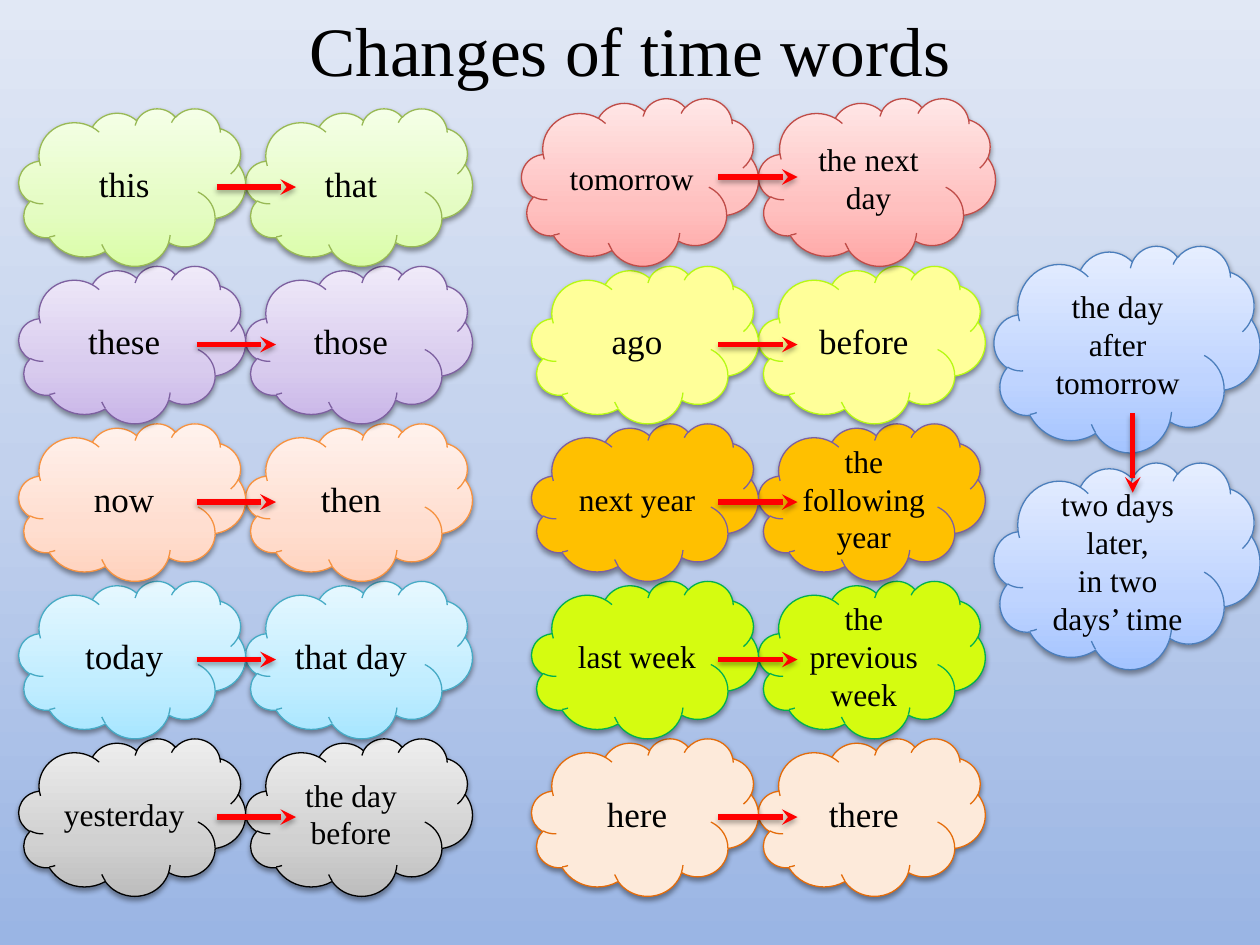
"""Build the slide of time words, each in a cloud with an arrow to its changed form."""
import copy

import pptx
import pptx.dml.color
import pptx.enum.shapes
import pptx.enum.text
import pptx.oxml
import pptx.oxml.ns
import pptx.util

RGB = pptx.dml.color.RGBColor
Inch = pptx.util.Inches
Pt = pptx.util.Pt
qn = pptx.oxml.ns.qn

BLACK = RGB(0, 0, 0)
RED = RGB(0xFF, 0, 0)
SKY = (RGB(0x9A, 0xB5, 0xE4), RGB(0xC2, 0xD1, 0xED), RGB(0xE1, 0xE8, 0xF5))
GREEN = (RGB(0xDA, 0xFD, 0xA7), RGB(0xE4, 0xFC, 0xC2), RGB(0xF5, 0xFF, 0xE7))
MAUVE = (RGB(0xC9, 0xB5, 0xE8), RGB(0xD8, 0xCB, 0xEE), RGB(0xF0, 0xEA, 0xF9))
PEACH = (RGB(0xFF, 0xD2, 0xBD), RGB(0xFF, 0xDE, 0xD0), RGB(0xFF, 0xF2, 0xED))
AQUA = (RGB(0xA7, 0xE6, 0xFF), RGB(0xC1, 0xED, 0xFF), RGB(0xE7, 0xF8, 0xFF))
GREY = (RGB(0xBD, 0xBD, 0xBD), RGB(0xD1, 0xD1, 0xD1), RGB(0xEE, 0xEE, 0xEE))
ROSE = (RGB(0xFF, 0xA6, 0xA5), RGB(0xFF, 0xC0, 0xBF), RGB(0xFF, 0xE7, 0xE7))
BLUE = (RGB(0xA4, 0xC4, 0xFF), RGB(0xBF, 0xD4, 0xFF), RGB(0xE6, 0xEE, 0xFF))
LEMON = RGB(0xFF, 0xFF, 0x99)
GOLD = RGB(0xFF, 0xC0, 0)
LIME = RGB(0xD5, 0xFC, 0x10)
CREAM = RGB(0xFD, 0xEA, 0xDA)
PLUM = RGB(0x7D, 0x60, 0xA0)

FONT = "Times New Roman"
TOP, ROW, WIDE = 0.86, 1.25, 1.8
GROW = 0.08
REACH = 0.63

# Each row: old word, new word, size, fill, line, arrow start, growth
LEFT = [
    ("this", "that", 20, GREEN, RGB(0x98, 0xB9, 0x55), 1.72, 0),
    ("these", "those", 20, MAUVE, PLUM, 1.56, 0),
    ("now", "then", 20, PEACH, RGB(0xF6, 0x92, 0x40), 1.56, 0),
    ("today", "that day", 20, AQUA, RGB(0x46, 0xAA, 0xC5), 1.56, 0),
    ("yesterday", "the day before", 18, GREY, BLACK, 1.72, 0),
]
RIGHT = [
    ("tomorrow", "the next day", 18, ROSE, RGB(0xBF, 0x4C, 0x48), 5.7, GROW),
    ("ago", "before", 20, LEMON, RGB(0xB7, 0xF9, 0x13), 5.7, 0),
    ("next year", "the following year", 18, GOLD, PLUM, 5.7, 0),
    ("last week", "the previous week", 18, LIME, RGB(0, 0xB0, 0x50), 5.7, 0),
    ("here", "there", 20, CREAM, RGB(0xE4, 0x6C, 0x0A), 5.7, 0),
]


def blend(fill, node, tints, mid):
    """Fill from bottom to top with three tints, the second at the share mid."""
    fill.gradient()
    fill.gradient_angle = 90
    stops = node.find(".//" + qn("a:gsLst"))
    stops.append(copy.deepcopy(stops[0]))
    for stop, tint, place in zip(fill.gradient_stops, tints, (0, mid, 1)):
        stop.color.rgb = tint
        stop.position = place


def shade(shape, alpha, dist):
    """Give a shape a soft black shadow below it."""
    props = shape._element.spPr
    for old in props.findall(qn("a:effectLst")):
        props.remove(old)
    props.append(pptx.oxml.parse_xml(
        f'<a:effectLst {pptx.oxml.ns.nsdecls("a")}>'
        f'<a:outerShdw blurRad="{Pt(3.1)}" dist="{Pt(dist)}" dir="5400000" rotWithShape="0">'
        f'<a:srgbClr val="000000"><a:alpha val="{alpha * 1000}"/></a:srgbClr>'
        '</a:outerShdw></a:effectLst>'))


def write(frame, lines, size):
    """Set centred black lines in the middle of a text frame."""
    frame.word_wrap = True
    frame.vertical_anchor = pptx.enum.text.MSO_ANCHOR.MIDDLE
    for i, line in enumerate(lines):
        para = frame.add_paragraph() if i else frame.paragraphs[0]
        para.alignment = pptx.enum.text.PP_ALIGN.CENTER
        run = para.add_run()
        run.text = line
        run.font.name = FONT
        run.font.size = Pt(size)
        run.font.color.rgb = BLACK


def cloud(slide, box, lines, size, tint, edge):
    """Add a cloud with its words, in a flat colour or a blend."""
    shape = slide.shapes.add_shape(
        pptx.enum.shapes.MSO_SHAPE.CLOUD, *map(Inch, box))
    if isinstance(tint, RGB):
        shape.fill.solid()
        shape.fill.fore_color.rgb = tint
    else:
        blend(shape.fill, shape._element, tint, 0.35)
    shape.line.color.rgb = edge
    shape.line.width = Pt(0.75)
    shade(shape, 38, 1.6)
    write(shape.text_frame, lines, size)


def arrow(slide, x, y, dx, dy):
    """Add a red arrow that starts at x, y."""
    line = slide.shapes.add_connector(
        pptx.enum.shapes.MSO_CONNECTOR.STRAIGHT, *map(Inch, (x, y, x + dx, y + dy)))
    line.line.color.rgb = RED
    line.line.width = Pt(3)
    tail = pptx.oxml.parse_xml(
        f'<a:tailEnd {pptx.oxml.ns.nsdecls("a")} type="stealth"/>')
    line.line._get_or_add_ln().append(tail)
    shade(line, 35, 1.8)


def column(slide, seam, rows):
    """Add rows of cloud pairs that meet at the seam, with arrows across."""
    for i, (old, new, size, tint, edge, start, grow) in reversed(list(enumerate(rows))):
        top = TOP + i * ROW - grow
        wide, high = WIDE + grow, ROW + grow
        cloud(slide, (seam, top, wide, high), [new], size, tint, edge)
        cloud(slide, (seam - wide, top, wide, high), [old], size, tint, edge)
        arrow(slide, start, top + ROW / 2, REACH, 0)


def main():
    """Build and save the slide."""
    deck = pptx.Presentation()
    deck.slide_width, deck.slide_height = Inch(10), Inch(7.5)
    slide = deck.slides.add_slide(deck.slide_layouts[6])
    blend(slide.background.fill, slide._element, SKY, 0.5)

    edge = RGB(0x4B, 0x7E, 0xBC)
    cloud(slide, (7.89, 1.95, 2.11, 1.64), ["the day after tomorrow"], 18, BLUE, edge)
    cloud(slide, (7.89, 3.67, 2.11, 1.64),
          ["two days later,", "in two days’ time"], 18, BLUE, edge)
    arrow(slide, 8.99, 3.28, 0, REACH)
    column(slide, 1.95, LEFT)
    column(slide, 6.02, RIGHT)

    title = slide.shapes.add_textbox(*map(Inch, (0.5, 0, 9, 0.78)))
    write(title.text_frame, ["Changes of time words"], 39.6)
    deck.save("out.pptx")


if __name__ == "__main__":
    main()
